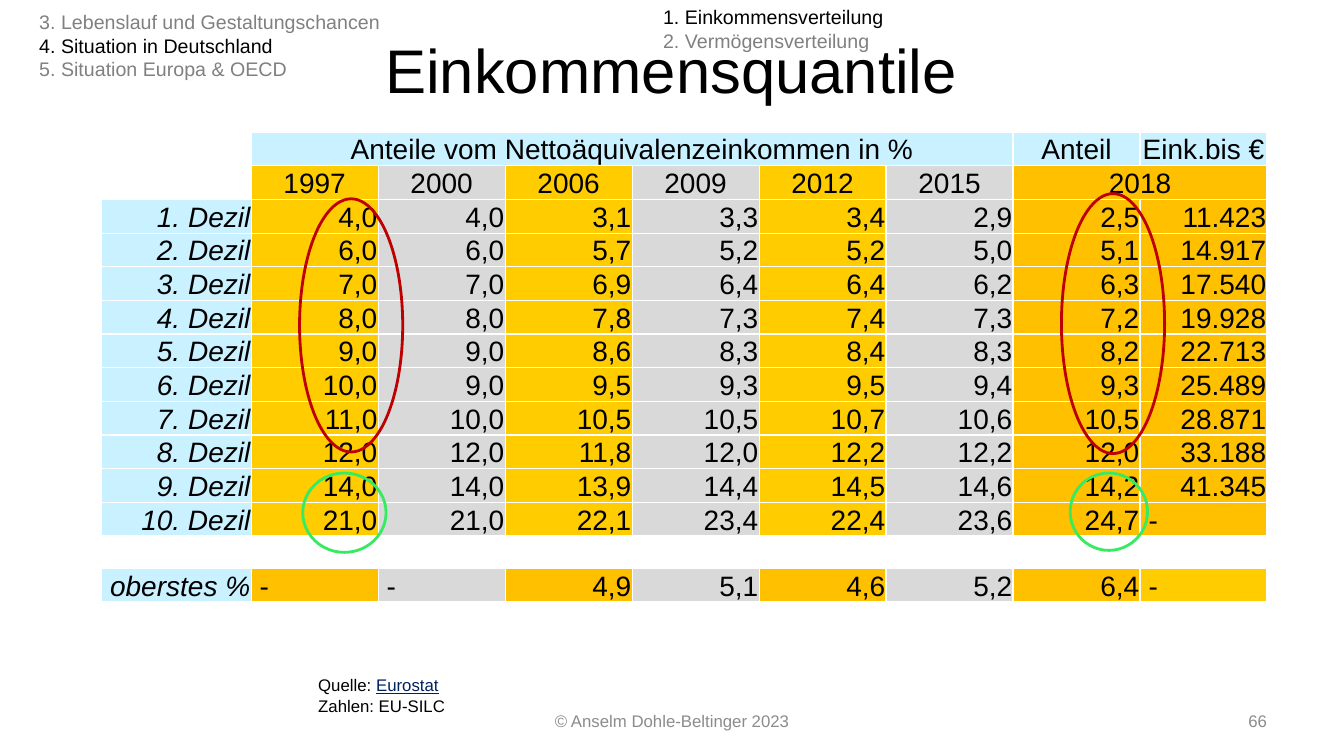
from lxml import etree
from pptx import Presentation
from pptx.dml.color import RGBColor
from pptx.enum.shapes import MSO_SHAPE
from pptx.enum.text import MSO_ANCHOR, PP_ALIGN
from pptx.oxml.ns import qn
from pptx.util import Cm, Pt

LEFT, CENTER, RIGHT = PP_ALIGN.LEFT, PP_ALIGN.CENTER, PP_ALIGN.RIGHT
TOP, MIDDLE, BOTTOM = MSO_ANCHOR.TOP, MSO_ANCHOR.MIDDLE, MSO_ANCHOR.BOTTOM
OVAL = MSO_SHAPE.OVAL

BLACK = RGBColor(0x00, 0x00, 0x00)
GREY = RGBColor(0x80, 0x80, 0x80)
FOOTER_GREY = RGBColor(0x8C, 0x8C, 0x8C)
NAVY = RGBColor(0x00, 0x20, 0x60)
RED = RGBColor(0xBD, 0x00, 0x00)
GREEN = RGBColor(0x36, 0xEA, 0x61)
LIGHT_BLUE = RGBColor(0xC9, 0xF1, 0xFF)
YELLOW = RGBColor(0xFF, 0xCC, 0x00)
AMBER = RGBColor(0xFF, 0xC0, 0x00)
SILVER = RGBColor(0xD9, 0xD9, 0xD9)

YEARS = ["1997", "2000", "2006", "2009", "2012", "2015", "2018", ""]
DECILES = [
    "4,0 4,0 3,1 3,3 3,4 2,9 2,5 11.423",
    "6,0 6,0 5,7 5,2 5,2 5,0 5,1 14.917",
    "7,0 7,0 6,9 6,4 6,4 6,2 6,3 17.540",
    "8,0 8,0 7,8 7,3 7,4 7,3 7,2 19.928",
    "9,0 9,0 8,6 8,3 8,4 8,3 8,2 22.713",
    "10,0 9,0 9,5 9,3 9,5 9,4 9,3 25.489",
    "11,0 10,0 10,5 10,5 10,7 10,6 10,5 28.871",
    "12,0 12,0 11,8 12,0 12,2 12,2 12,0 33.188",
    "14,0 14,0 13,9 14,4 14,5 14,6 14,2 41.345",
    "21,0 21,0 22,1 23,4 22,4 23,6 24,7 -",
]
TOP_PERCENT = "- - 4,9 5,1 4,6 5,2 6,4 -"
YEAR_FILLS = [YELLOW, SILVER] * 3 + [AMBER, AMBER]
TOP_PERCENT_FILLS = [AMBER, SILVER] * 3 + [AMBER, YELLOW]


class SlideBuilder:
    def __init__(self, slide, font_name="Arial"):
        self.slide = slide
        self.font_name = font_name

    def add_run(self, paragraph, text, size, color=BLACK, italic=False, underline=False):
        run = paragraph.add_run()
        run.text = text
        font = run.font
        font.name, font.size, font.color.rgb = self.font_name, Pt(size), color
        font.italic, font.underline = italic, underline

    def title(self, text, left, top, width, height):
        shape = self.slide.shapes.title
        shape.left, shape.top = Cm(left), Cm(top)
        shape.width, shape.height = Cm(width), Cm(height)
        shape.text_frame.vertical_anchor = MIDDLE
        paragraph = shape.text_frame.paragraphs[0]
        paragraph.alignment = CENTER
        self.add_run(paragraph, text, 44)

    def text(self, lines, left, top, width, height, size, align=LEFT, anchor=TOP):
        """Each line is a list of (text, color, underline) runs."""
        box = self.slide.shapes.add_textbox(Cm(left), Cm(top), Cm(width), Cm(height))
        frame = box.text_frame
        frame.word_wrap = True
        frame.vertical_anchor = anchor
        for index, runs in enumerate(lines):
            paragraph = frame.add_paragraph() if index else frame.paragraphs[0]
            paragraph.alignment = align
            for text, color, underline in runs:
                self.add_run(paragraph, text, size, color, underline=underline)

    def ellipse(self, left, top, width, height, color):
        shape = self.slide.shapes.add_shape(OVAL, Cm(left), Cm(top), Cm(width), Cm(height))
        shape.shadow.inherit = False
        shape.fill.background()
        shape.line.color.rgb = color
        shape.line.width = Pt(2)

    def table(self, rows, columns, left, top, widths, height):
        frame = self.slide.shapes.add_table(
            rows, columns, Cm(left), Cm(top), Cm(sum(widths)), Cm(height))
        table = frame.table
        table.first_row = table.horz_banding = False
        for column, width in zip(table.columns, widths):
            column.width = Cm(width)
        for row in table.rows:
            row.height = Cm(height / rows)
        for cell in table.iter_cells():
            cell.margin_left = cell.margin_right = Cm(0.02)
            cell.margin_top = cell.margin_bottom = 0
            cell.vertical_anchor = BOTTOM
            self.white_borders(cell)
            cell.fill.background()
        return table

    def white_borders(self, cell):
        properties = cell._tc.get_or_add_tcPr()
        for side in ("a:lnL", "a:lnR", "a:lnT", "a:lnB"):
            line = etree.SubElement(properties, qn(side), w=str(Pt(1)))
            fill = etree.SubElement(line, qn("a:solidFill"))
            etree.SubElement(fill, qn("a:srgbClr"), val="FFFFFF")

    def cell(self, cell, text, fill, align=RIGHT, italic=False):
        cell.fill.solid()
        cell.fill.fore_color.rgb = fill
        if text:
            paragraph = cell.text_frame.paragraphs[0]
            paragraph.alignment = align
            self.add_run(paragraph, text, 20, italic=italic)

    def value_row(self, table, row, label, values, fills):
        self.cell(table.cell(row, 0), label, LIGHT_BLUE, italic=True)
        for column, (value, fill) in enumerate(zip(values.split(), fills), 1):
            if value == "-":
                self.cell(table.cell(row, column), " -", fill, LEFT)
            else:
                self.cell(table.cell(row, column), value, fill)


def add_income_table(builder):
    table = builder.table(14, 9, 2.55, 3.33, [3.78] + [3.2] * 8, 11.41)
    table.cell(0, 1).merge(table.cell(0, 6))
    table.cell(1, 7).merge(table.cell(1, 8))
    headings = {1: "Anteile vom Nettoäquivalenzeinkommen in %", 7: "Anteil", 8: "Eink.bis €"}
    for column, heading in headings.items():
        builder.cell(table.cell(0, column), heading, LIGHT_BLUE, CENTER)
    for column, (year, fill) in enumerate(zip(YEARS, YEAR_FILLS), 1):
        builder.cell(table.cell(1, column), year, fill, CENTER)
    for number, values in enumerate(DECILES, 1):
        builder.value_row(table, number + 1, f"{number}. Dezil", values, YEAR_FILLS)
    builder.value_row(table, 13, "oberstes %", TOP_PERCENT, TOP_PERCENT_FILLS)


def main():
    presentation = Presentation()
    presentation.slide_width, presentation.slide_height = Cm(33.87), Cm(19.05)
    slide = presentation.slides.add_slide(presentation.slide_layouts[5])
    builder = SlideBuilder(slide)

    builder.title("Einkommensquantile", 1.68, 0.15, 30.48, 3.18)
    builder.text([[("© Anselm Dohle-Beltinger 2023", FOOTER_GREY, False)]],
                 11.58, 17.65, 10.72, 1.02, 12, CENTER, MIDDLE)
    builder.text([[("66", FOOTER_GREY, False)]], 24.28, 17.65, 7.9, 1.02, 12, RIGHT, MIDDLE)
    add_income_table(builder)
    builder.text([[("Quelle: ", BLACK, False), ("Eurostat", NAVY, True),
                   (" Zahlen: EU-SILC", BLACK, False)]], 7.77, 16.89, 3.81, 1.27, 12)

    builder.ellipse(7.55, 5.01, 2.6, 6.38, RED)
    builder.ellipse(26.75, 4.88, 2.6, 6.55, RED)
    builder.ellipse(7.63, 11.92, 2.1, 2, GREEN)
    builder.ellipse(26.97, 11.92, 1.95, 1.95, GREEN)

    builder.text([[("3. Lebenslauf und Gestaltungschancen", GREY, False)],
                  [("4. Situation in Deutschland", BLACK, False)],
                  [("5. Situation Europa & OECD", GREY, False)]], 0.74, 0.13, 9.4, 2.06, 14)
    builder.text([[("1. Einkommensverteilung", BLACK, False)],
                  [("2. Vermögensverteilung", GREY, False)]], 16.46, 0, 11.73, 1.45, 14)

    presentation.save("out.pptx")


if __name__ == "__main__":
    main()
